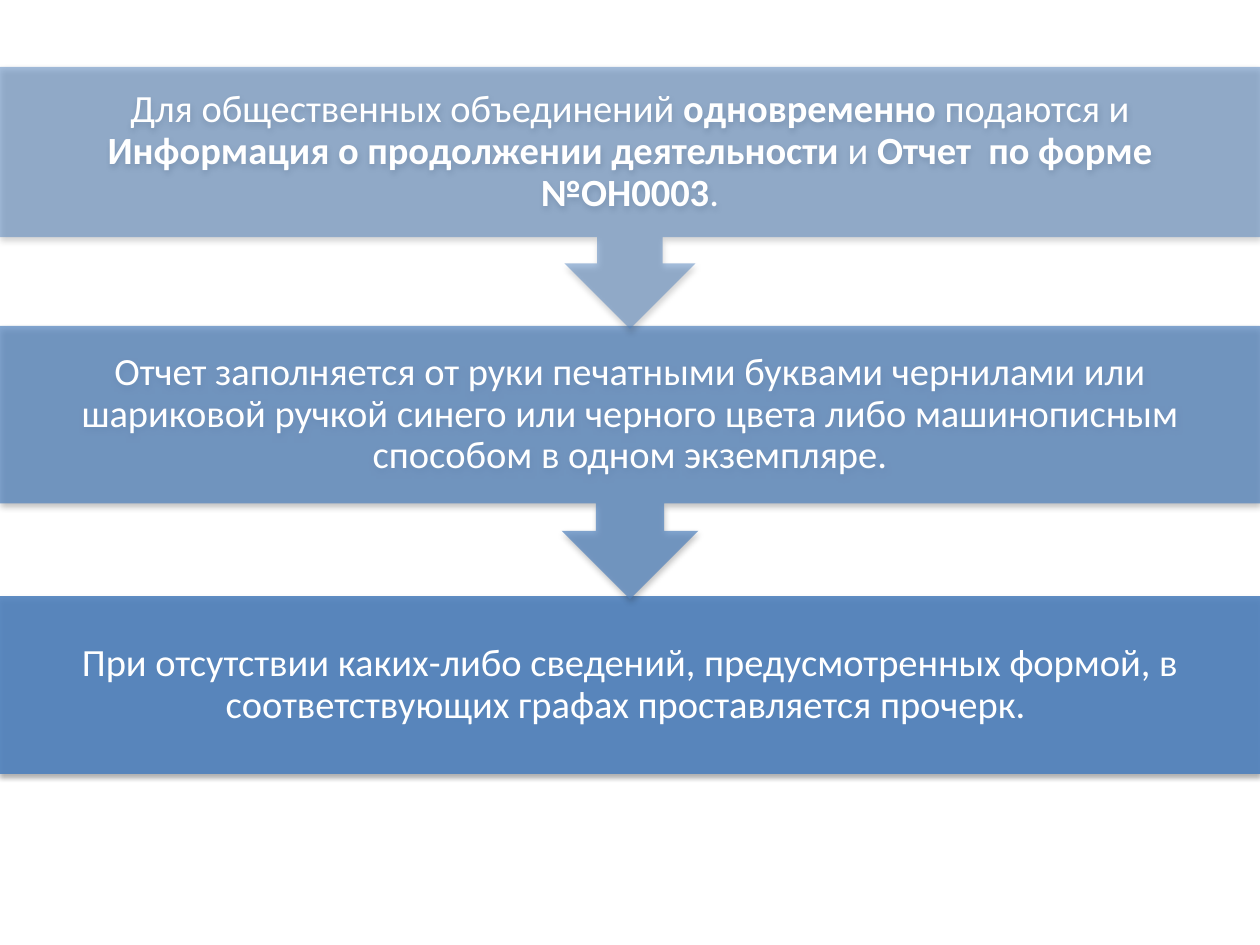
import pptx
import pptx.util
import pptx.dml.color
import pptx.enum.shapes
import pptx.enum.text
import pptx.oxml
import pptx.oxml.ns

Cm, Pt = pptx.util.Cm, pptx.util.Pt
SHAPE = pptx.enum.shapes.MSO_SHAPE
COLORS = {"band": "4F81BD", "text": "FFFFFF", "shade": "000000"}


def color(name):
    return pptx.dml.color.RGBColor.from_string(COLORS[name])


def add_text(para, text, font="Calibri", size=22, bold=False, ink="text"):
    run = para.add_run()
    run.text = text
    run.font.name = font
    run.font.size = Pt(size)
    run.font.bold = bold
    run.font.color.rgb = color(ink)


def add_node(parent, tag, **attrs):
    node = pptx.oxml.parse_xml(f"<a:{tag} {pptx.oxml.ns.nsdecls('a')}/>")
    for key, value in attrs.items():
        node.set(key, str(value))
    parent.append(node)
    return node


class Deck:
    """Holds the style and the current slide."""

    inset = Cm(0.43)
    spacing = 0.9

    def __init__(self, width, height):
        self.file = pptx.Presentation()
        self.file.slide_width, self.file.slide_height = width, height
        self.width = width
        self.slide = self.file.slides.add_slide(self.file.slide_layouts[6])

    def shade(self, shape):
        """Give the shape a soft shadow falling straight down."""
        shape.shadow.inherit = False
        effects = shape._element.spPr.find(pptx.oxml.ns.qn("a:effectLst"))
        outer = add_node(effects, "outerShdw", blurRad=Pt(3.15), dist=Pt(1.8),
                         dir=5400000, rotWithShape=0)
        tone = add_node(outer, "srgbClr", val=COLORS["shade"])
        add_node(tone, "alpha", val=35000)

    def step(self, kind, top, height, alpha, parts):
        """Draw a full-width band; parts are (text, bold) pairs."""
        shape = self.slide.shapes.add_shape(kind, 0, top, self.width, height)
        shape.fill.solid()
        shape.fill.fore_color.rgb = color("band")
        tone = next(shape._element.spPr.iter(pptx.oxml.ns.qn("a:srgbClr")))
        add_node(tone, "alpha", val=alpha * 1000)
        shape.line.fill.background()
        self.shade(shape)

        frame = shape.text_frame
        frame.word_wrap = True
        frame.vertical_anchor = pptx.enum.text.MSO_ANCHOR.MIDDLE
        frame.margin_left = frame.margin_right = self.inset
        frame.margin_top = frame.margin_bottom = self.inset
        para = frame.paragraphs[0]
        para.alignment = pptx.enum.text.PP_ALIGN.CENTER
        para.line_spacing = self.spacing
        for text, bold in parts:
            add_text(para, text, bold=bold)


def main():
    deck = Deck(Cm(25.4), Cm(19.05))
    arrow = SHAPE.DOWN_ARROW_CALLOUT
    # The lowest band goes first, so each arrow tip lies over the next band.
    deck.step(SHAPE.RECTANGLE, Cm(12.02), Cm(3.58), 90, [
        ("При отсутствии каких-либо сведений, предусмотренных формой, "
         "в соответствующих графах проставляется прочерк. ", False)])
    deck.step(arrow, Cm(6.57), Cm(5.51), 70, [
        ("Отчет заполняется от руки печатными буквами чернилами или "
         "шариковой ручкой синего или черного цвета либо машинописным "
         "способом в одном экземпляре.", False)])
    deck.step(arrow, Cm(1.35), Cm(5.28), 50, [
        ("Для общественных объединений ", False),
        ("одновременно", True),
        (" подаются и ", False),
        ("Информация о продолжении деятельности ", True),
        ("и ", False),
        ("Отчет  по форме №ОН0003", True),
        (".", False)])
    deck.file.save("out.pptx")


if __name__ == "__main__":
    main()
